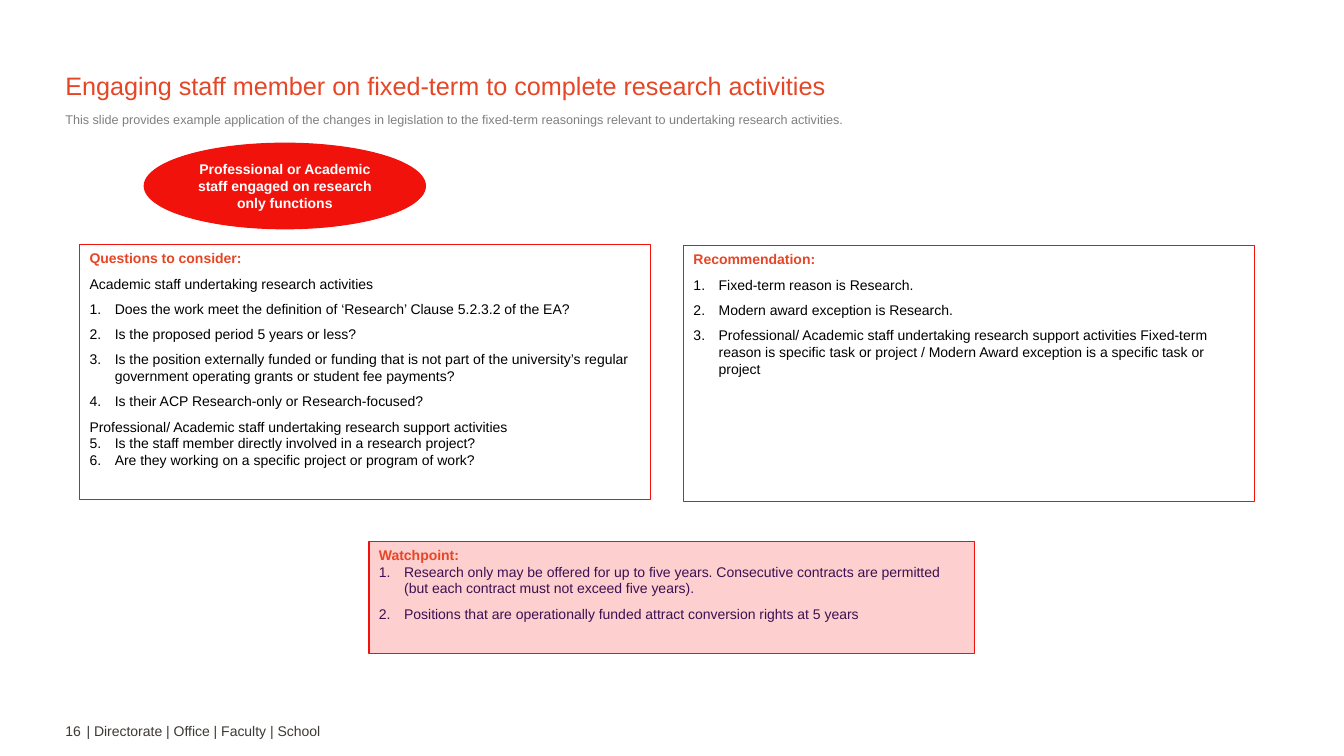
import pptx
import pptx.util
import pptx.dml.color
import pptx.enum.shapes
import pptx.enum.text
import pptx.oxml
import pptx.oxml.ns

Inches, Pt = pptx.util.Inches, pptx.util.Pt
SHAPES = pptx.enum.shapes.MSO_SHAPE
ALIGN = pptx.enum.text.PP_ALIGN
ANCHOR = pptx.enum.text.MSO_ANCHOR

COLOURS = {
    "footer": "3D3935", "accent": "E64626", "muted": "7F7F7F", "red": "F2120C",
    "pink": "FDCFCE", "purple": "3C1053", "black": "000000", "white": "FFFFFF",
}

LABELS = [
    ("16", (0.55, 7.12, 0.49, 0.27), 10, "footer"),
    ("| Directorate | Office | Faculty | School", (0.76, 7.12, 3.38, 0.27), 10, "footer"),
    ("Engaging staff member on fixed-term to complete research activities",
     (0.55, 0.65, 9.43, 0.4), 18, "accent"),
    ("This slide provides example application of the changes in legislation to the "
     "fixed-term reasonings relevant to undertaking research activities.",
     (0.55, 1.06, 10.79, 0.25), 9, "muted"),
]

AUDIENCE = ("Professional or Academic staff engaged on research only functions",
            (1.43, 1.42, 2.79, 0.85))

PANELS = [
    {"heading": "Questions to consider:", "at": (0.79, 2.43, 5.66, 2.53),
     "fill": None, "colour": "black", "lines": [
        (None, 6, "Academic staff undertaking research activities"),
        (1, 6, "Does the work meet the definition of ‘Research’ Clause 5.2.3.2 of the EA?"),
        (1, 6, "Is the proposed period 5 years or less?"),
        (1, 6, "Is the position externally funded or funding that is not part of the "
               "university’s regular government operating grants or student fee payments?"),
        (1, 6, "Is their ACP Research-only or Research-focused?"),
        (None, 6, "Professional/ Academic staff undertaking research support activities"),
        (5, 0, "Is the staff member directly involved in a research project?"),
        (5, 0, "Are they working on a specific project or program of work?")]},
    {"heading": "Recommendation:", "at": (6.78, 2.44, 5.66, 2.54),
     "fill": None, "colour": "black", "lines": [
        (1, 6, "Fixed-term reason is Research."),
        (1, 6, "Modern award exception is Research."),
        (1, 6, "Professional/ Academic staff undertaking research support activities "
               "Fixed-term reason is specific task or project / Modern Award exception "
               "is a specific task or project")]},
    {"heading": "Watchpoint:", "at": (3.66, 5.37, 6.01, 1.11),
     "fill": "pink", "colour": "purple", "lines": [
        (1, 0, "Research only may be offered for up to five years. Consecutive contracts "
               "are permitted (but each contract must not exceed five years)."),
        (1, 6, "Positions that are operationally funded attract conversion rights at 5 years")]},
]


def rgb(name):
    return pptx.dml.color.RGBColor.from_string(COLOURS[name])


def apply(target, formats):
    for key, value in formats.items():
        setattr(target, key, value)


def write(paragraph, text, size, colour, bold=False, align=ALIGN.LEFT, before=0, start=None):
    if start:
        props = paragraph._p.get_or_add_pPr()
        props.set("marL", str(Inches(0.25)))
        props.set("indent", str(Inches(-0.25)))
        number = pptx.oxml.parse_xml(
            f'<a:buAutoNum {pptx.oxml.ns.nsdecls("a")} type="arabicPeriod" startAt="{start}"/>')
        props.append(number)
    apply(paragraph, {"alignment": align, "space_before": Pt(before)})
    run = paragraph.add_run()
    run.text = text
    apply(run.font, {"name": "Arial", "size": Pt(size), "bold": bold})
    run.font.color.rgb = rgb(colour)


def add_outlined(kind, at, fill, anchor):
    outlined = slide.shapes.add_shape(kind, *map(Inches, at))
    outlined.shadow.inherit = False
    if fill:
        outlined.fill.solid()
        outlined.fill.fore_color.rgb = rgb(fill)
    else:
        outlined.fill.background()
    outlined.line.color.rgb = rgb("red")
    outlined.line.width = Pt(0.75)
    apply(outlined.text_frame, {"word_wrap": True, "vertical_anchor": anchor})
    return outlined.text_frame


deck = pptx.Presentation()
apply(deck, {"slide_width": Inches(13.33), "slide_height": Inches(7.5)})
slide = deck.slides.add_slide(deck.slide_layouts[6])

for wording, at, size, colour in LABELS:
    label = slide.shapes.add_textbox(*map(Inches, at)).text_frame
    label.word_wrap = True
    write(label.paragraphs[0], wording, size, colour)

audience_text, audience_at = AUDIENCE
audience = add_outlined(SHAPES.FLOWCHART_CONNECTOR, audience_at, "red", ANCHOR.MIDDLE)
write(audience.paragraphs[0], audience_text, 10, "white", True, ALIGN.CENTER)

for panel in PANELS:
    body = add_outlined(SHAPES.RECTANGLE, panel["at"], panel["fill"], ANCHOR.TOP)
    write(body.paragraphs[0], panel["heading"], 10, "accent", True)
    for start, before, wording in panel["lines"]:
        write(body.add_paragraph(), wording, 10, panel["colour"], before=before, start=start)

deck.save("out.pptx")
